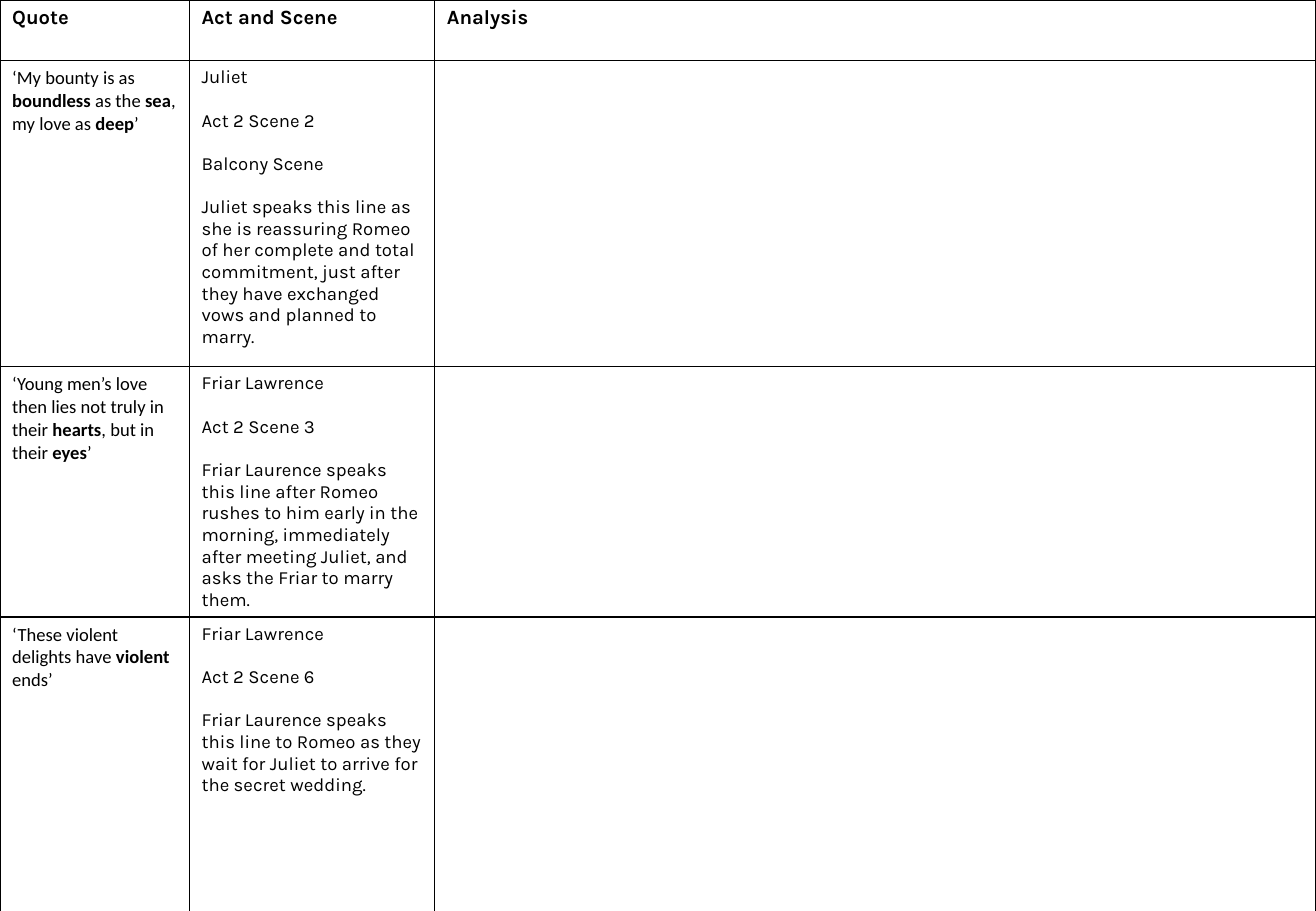
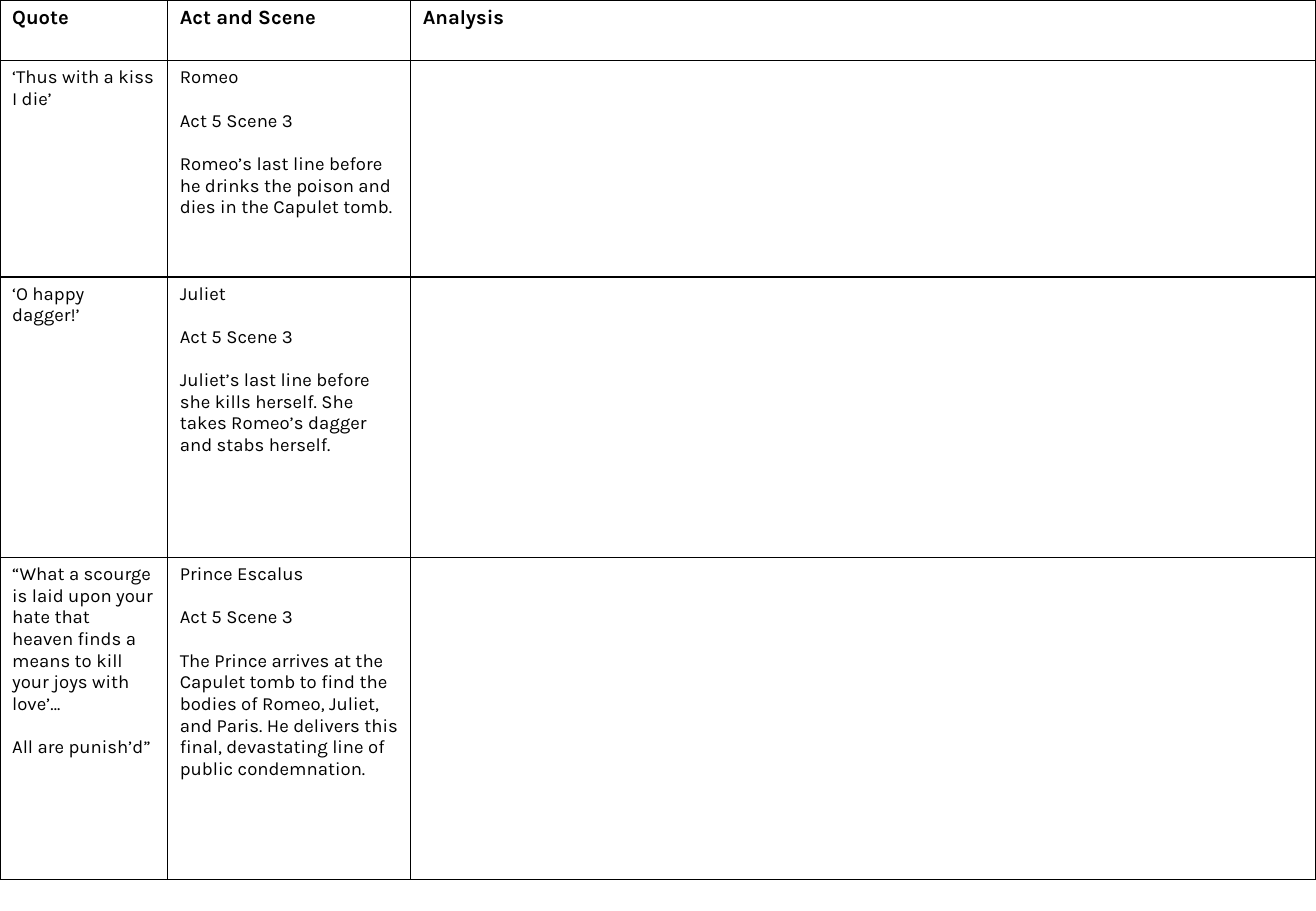
import dataclasses

import lxml.etree
import pptx
import pptx.dml.color
import pptx.oxml.ns
import pptx.util

Pt = pptx.util.Pt


@dataclasses.dataclass(frozen=True)
class Theme:
    ink: str = "000000"
    main: str = "Karla"
    alt: str = "Calibri"
    head: float = 12
    body: float = 11
    gap: float = 12.8
    rule: float = 1
    wide: float = 780
    high: float = 540


THEME = Theme()
HEADS = ["Quote", "Act and Scene", "Analysis"]

LOVE = [
    (["‘My bounty is as *boundless* as the *sea*, my love as *deep*’"],
     ["Juliet", "Act 2 Scene 2", "Balcony Scene",
      "Juliet speaks this line as she is reassuring Romeo of her complete and total "
      "commitment, just after they have exchanged vows and planned to marry."]),
    (["‘Young men’s love then lies not truly in their *hearts*, but in their *eyes*’"],
     ["Friar Lawrence", "Act 2 Scene 3",
      "Friar Laurence speaks this line after Romeo rushes to him early in the morning, "
      "immediately after meeting Juliet, and asks the Friar to marry them."]),
    (["‘These violent delights have *violent* ends’"],
     ["Friar Lawrence", "Act 2 Scene 6",
      "Friar Laurence speaks this line to Romeo as they wait for Juliet to arrive "
      "for the secret wedding."]),
]

DEATH = [
    (["‘Thus with a kiss I die’"],
     ["Romeo", "Act 5 Scene 3",
      "Romeo’s last line before he drinks the poison and dies in the Capulet tomb."]),
    (["‘O happy dagger!’"],
     ["Juliet", "Act 5 Scene 3",
      "Juliet’s last line before she kills herself. She takes Romeo’s dagger "
      "and stabs herself."]),
    (["“What a scourge is laid upon your hate that heaven finds a means to kill "
      "your joys with love’…", "All are punish’d”"],
     ["Prince Escalus", "Act 5 Scene 3",
      "The Prince arrives at the Capulet tomb to find the bodies of Romeo, Juliet, "
      "and Paris. He delivers this final, devastating line of public condemnation."]),
]


def style(font, form):
    for key, value in form.items():
        setattr(font, key, value)
    font.color.rgb = pptx.dml.color.RGBColor.from_string(THEME.ink)


def frame(cell):
    qn = pptx.oxml.ns.qn
    props = cell._tc.get_or_add_tcPr()
    for side in ("lnL", "lnR", "lnT", "lnB"):
        line = lxml.etree.SubElement(props, qn(f"a:{side}"), w=str(Pt(THEME.rule)))
        fill = lxml.etree.SubElement(line, qn("a:solidFill"))
        lxml.etree.SubElement(fill, qn("a:srgbClr"), val=THEME.ink)
    cell.fill.background()


def write(cell, texts, name, size, bold=False):
    for spot, text in enumerate(texts):
        para = cell.text_frame.add_paragraph() if spot else cell.text_frame.paragraphs[0]
        para.space_before = Pt(THEME.gap if spot else 0)
        for turn, part in enumerate(text.split("*")):
            run = para.add_run()
            run.text = part
            style(run.font, {"name": name, "size": Pt(size), "bold": bold or turn % 2 == 1})


def add_grid(deck, cols, highs, quotes, face):
    slide = deck.slides.add_slide(deck.slide_layouts[6])
    cols = [*cols, THEME.wide - sum(cols)]
    grid = slide.shapes.add_table(
        len(highs), len(cols), 0, 0, Pt(THEME.wide), Pt(sum(highs))).table
    grid.first_row = grid.horz_banding = False
    for col, wide in zip(grid.columns, cols):
        col.width = Pt(wide)
    for row, high in zip(grid.rows, highs):
        row.height = Pt(high)
    for cell in grid.iter_cells():
        frame(cell)
    for spot, head in enumerate(HEADS):
        write(grid.cell(0, spot), [head], THEME.main, THEME.head, True)
    for row, (quote, scene) in enumerate(quotes, 1):
        write(grid.cell(row, 0), quote, face, THEME.body)
        write(grid.cell(row, 1), scene, THEME.main, THEME.body)


def main():
    deck = pptx.Presentation()
    deck.slide_width, deck.slide_height = Pt(THEME.wide), Pt(THEME.high)
    add_grid(deck, [112.3, 145.4], [36, 181.4, 141.1, 181.5], LOVE, THEME.alt)
    add_grid(deck, [99.4, 144], [36, 128.2, 166.3, 190.8], DEATH, THEME.main)
    deck.save("out.pptx")


if __name__ == "__main__":
    main()
